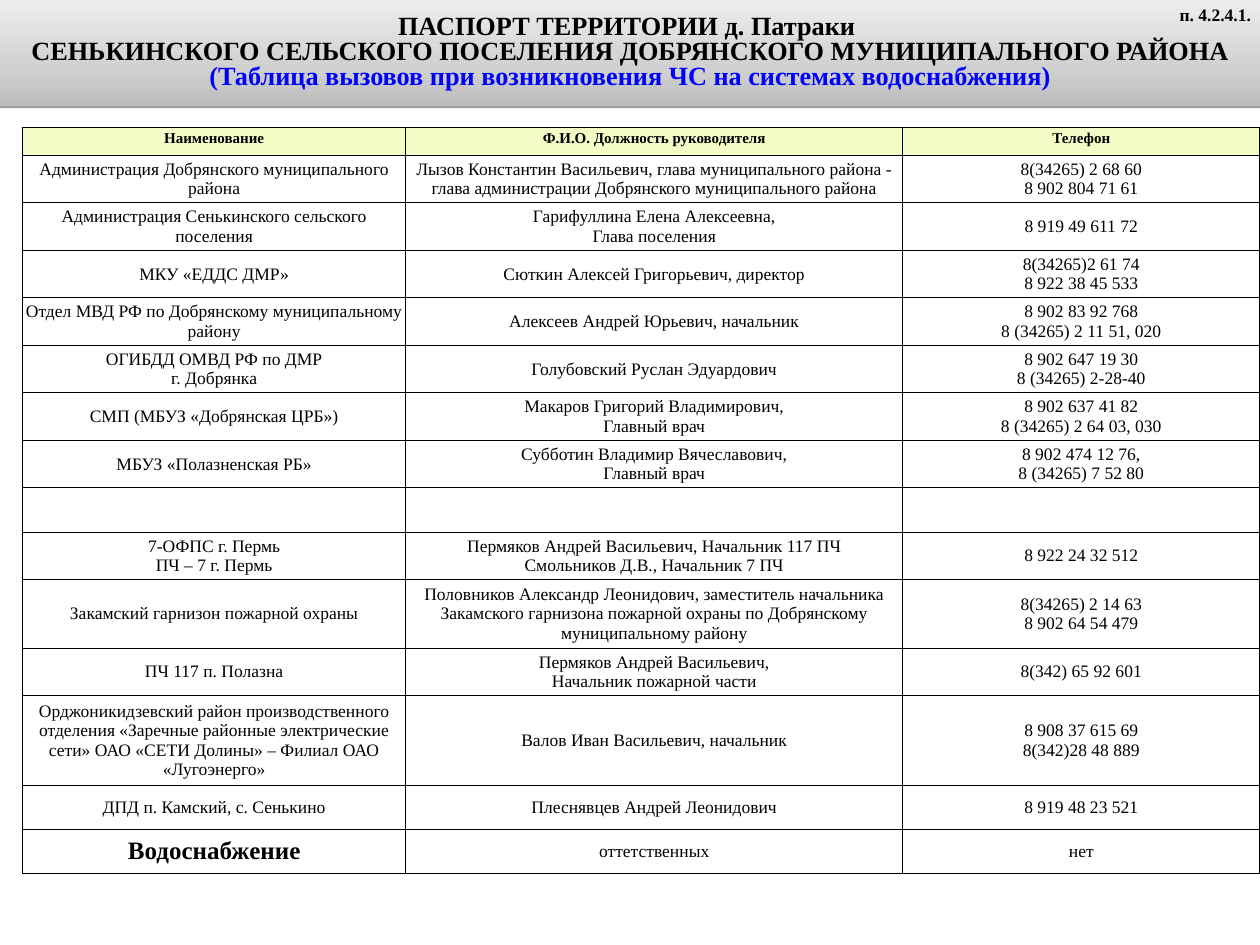
from dataclasses import dataclass

from lxml import etree
from pptx import Presentation
from pptx.dml.color import RGBColor
from pptx.enum.text import MSO_ANCHOR, MSO_AUTO_SIZE, PP_ALIGN
from pptx.oxml import parse_xml
from pptx.oxml.ns import nsdecls, qn
from pptx.util import Pt

CENTER, RIGHT = PP_ALIGN.CENTER, PP_ALIGN.RIGHT
TOP, MIDDLE = MSO_ANCHOR.TOP, MSO_ANCHOR.MIDDLE
FIXED = MSO_AUTO_SIZE.NONE

FONT = "Times New Roman"
COLORS = {
    "text": "000000",
    "accent": "0000FF",
    "head": "F4FBC7",
    "low": "BCBCBC",
    "mid": "D0D0D0",
    "high": "EDEDED",
}
WIDTH, HEIGHT = 1008, 756
BAND = 85
INSET = 2.2
COLS = [306.7, 397.5, 285.8]
ROW = 35.3


@dataclass
class Row:
    name: str = ""
    head: str = ""
    phone: str = ""
    high: float = ROW
    size: float = 14


TITLE = [
    ("ПАСПОРТ ТЕРРИТОРИИ д. Патраки ", "text"),
    ("СЕНЬКИНСКОГО СЕЛЬСКОГО ПОСЕЛЕНИЯ ДОБРЯНСКОГО МУНИЦИПАЛЬНОГО РАЙОНА", "text"),
    ("(Таблица вызовов при возникновения ЧС на системах водоснабжения)", "accent"),
]
HEADER = Row("Наименование", "Ф.И.О. Должность руководителя", "Телефон", 22.3, 12)
ROWS = [
    Row("Администрация Добрянского муниципального района",
        "Лызов Константин Васильевич, глава муниципального района - "
        "глава администрации Добрянского муниципального района",
        "8(34265) 2 68 60\n8 902 804 71 61"),
    Row("Администрация Сенькинского сельского поселения",
        "Гарифуллина Елена Алексеевна,\nГлава поселения", "8 919 49 611 72"),
    Row("МКУ «ЕДДС ДМР»", "Сюткин Алексей Григорьевич, директор",
        "8(34265)2 61 74\n8 922 38 45 533"),
    Row("Отдел МВД РФ по Добрянскому муниципальному району",
        "Алексеев Андрей Юрьевич, начальник",
        "8 902 83 92 768\n8 (34265) 2 11 51, 020"),
    Row("ОГИБДД ОМВД РФ по ДМР\nг. Добрянка", "Голубовский Руслан Эдуардович",
        "8 902 647 19 30\n8 (34265) 2-28-40"),
    Row("СМП (МБУЗ «Добрянская ЦРБ»)",
        "Макаров Григорий Владимирович,\nГлавный врач",
        "8 902 637 41 82\n8 (34265) 2 64 03, 030"),
    Row("МБУЗ «Полазненская РБ»",
        "Субботин Владимир Вячеславович,\nГлавный врач",
        "8 902 474 12 76,\n8 (34265) 7 52 80"),
    Row(),
    Row("7-ОФПС г. Пермь\nПЧ – 7 г. Пермь",
        "Пермяков Андрей Васильевич, Начальник 117 ПЧ\n"
        "Смольников Д.В., Начальник 7 ПЧ", "8 922 24 32 512"),
    Row("Закамский гарнизон пожарной охраны",
        "Половников Александр Леонидович, заместитель начальника "
        "Закамского гарнизона пожарной охраны по Добрянскому "
        "муниципальному району",
        "8(34265) 2 14 63\n8 902 64 54 479", 38.2),
    Row("ПЧ 117 п. Полазна",
        "Пермяков Андрей Васильевич,\nНачальник пожарной части",
        "8(342) 65 92 601"),
    Row("Орджоникидзевский район производственного отделения «Заречные "
        "районные электрические сети» ОАО «СЕТИ Долины» – Филиал ОАО "
        "«Лугоэнерго»",
        "Валов Иван Васильевич, начальник",
        "8 908 37 615 69\n8(342)28 48 889", 50.4),
    Row("ДПД п. Камский, с. Сенькино", "Плеснявцев Андрей Леонидович",
        "8 919 48 23 521"),
    Row("Водоснабжение", "оттетственных", "нет"),
]


def style(para, size: float, bold: bool, color="text", align=CENTER) -> None:
    para.alignment = align
    font = para.font
    font.name, font.size, font.bold = FONT, Pt(size), bold
    font.color.rgb = RGBColor.from_string(COLORS[color])


def shade(shape) -> None:
    """Give the band its three-stop gradient and a thin shadow below."""
    stops = [(0, "low"), (35, "mid"), (100, "high")]
    inner = "".join(
        f'<a:gs pos="{pos * 1000}"><a:srgbClr val="{COLORS[key]}"/></a:gs>'
        for pos, key in stops)
    props = shape.element.spPr
    props.append(parse_xml(
        f'<a:gradFill {nsdecls("a")} rotWithShape="1"><a:gsLst>{inner}</a:gsLst>'
        '<a:lin ang="16200000" scaled="0"/></a:gradFill>'))
    props.append(parse_xml(
        f'<a:effectLst {nsdecls("a")}><a:outerShdw dist="20000" dir="5400000" '
        f'rotWithShape="0"><a:srgbClr val="{COLORS["text"]}">'
        '<a:alpha val="38000"/></a:srgbClr></a:outerShdw></a:effectLst>'))


def draw_title(slide) -> None:
    band = slide.shapes.title
    band.left, band.top, band.width, band.height = Pt(0), Pt(0), Pt(WIDTH), Pt(BAND)
    shade(band)
    frame = band.text_frame
    frame.text = "\n".join(text for text, _ in TITLE)
    frame.auto_size, frame.word_wrap = FIXED, True
    frame.vertical_anchor = MIDDLE
    for para, (_, color) in zip(frame.paragraphs, TITLE):
        style(para, 21, True, color)
        para.line_spacing = 0.8
        para.space_before = Pt(0)


def draw_label(slide) -> None:
    box = slide.shapes.add_textbox(Pt(931.7), Pt(0), Pt(76.3), Pt(24.5))
    frame = box.text_frame
    frame.word_wrap = True
    frame.text = "п. 4.2.4.1."
    style(frame.paragraphs[0], 14, True, align=RIGHT)


def frame_cell(cell) -> None:
    """Put a one-point line on all four sides."""
    props = cell._tc.get_or_add_tcPr()
    for side in ("lnL", "lnR", "lnT", "lnB"):
        line = etree.SubElement(props, qn(f"a:{side}"), w=str(Pt(1)))
        fill = etree.SubElement(line, qn("a:solidFill"))
        etree.SubElement(fill, qn("a:srgbClr"), val=COLORS["text"])


def fill_cell(cell, text: str, size: float, bold: bool, header: bool) -> None:
    frame_cell(cell)
    if header:
        cell.fill.solid()
        cell.fill.fore_color.rgb = RGBColor.from_string(COLORS["head"])
    else:
        cell.fill.background()
    cell.margin_left = cell.margin_right = Pt(INSET)
    cell.margin_top = cell.margin_bottom = Pt(INSET)
    cell.vertical_anchor = TOP if header else MIDDLE
    cell.text = text
    for para in cell.text_frame.paragraphs:
        style(para, size, bold)


def draw_table(slide) -> None:
    rows = [HEADER, *ROWS]
    table = slide.shapes.add_table(
        len(rows), len(COLS), Pt(18), Pt(102), Pt(sum(COLS)),
        Pt(sum(row.high for row in rows))).table
    table.horz_banding = False
    for col, width in zip(table.columns, COLS):
        col.width = Pt(width)
    for i, row in enumerate(rows):
        table.rows[i].height = Pt(row.high)
        for j, text in enumerate((row.name, row.head, row.phone)):
            topic = row is rows[-1] and j == 0
            fill_cell(table.cell(i, j), text, 20 if topic else row.size,
                      topic or row is HEADER, row is HEADER)


def main() -> None:
    deck = Presentation()
    deck.slide_width, deck.slide_height = Pt(WIDTH), Pt(HEIGHT)
    slide = deck.slides.add_slide(deck.slide_layouts[5])
    draw_title(slide)
    draw_label(slide)
    draw_table(slide)
    deck.save("out.pptx")


if __name__ == "__main__":
    main()
